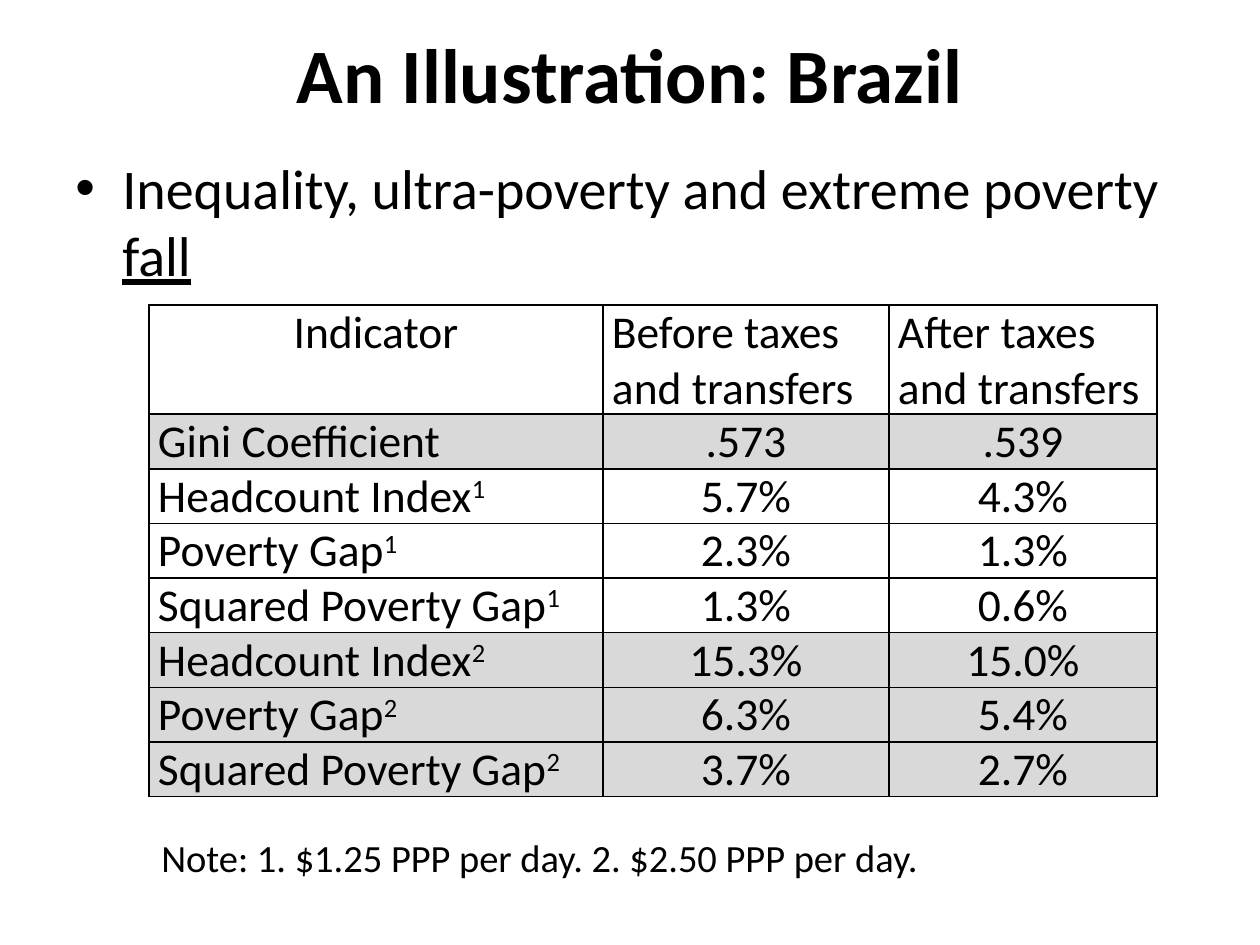
from lxml.etree import SubElement
from pptx import Presentation
from pptx.dml.color import RGBColor
from pptx.enum.text import MSO_ANCHOR as Anchor, PP_ALIGN as Align
from pptx.oxml.ns import qn
from pptx.util import Emu, Pt

BLACK = RGBColor(0x00, 0x00, 0x00)
GREY = RGBColor(0xD9, 0xD9, 0xD9)
PX = 914400 / 126


def px(*lengths):
    return [Emu(round(length * PX)) for length in lengths]


def style(paragraph, size, align=Align.LEFT, bold=False):
    paragraph.alignment = align
    for run in paragraph.runs:
        run.font.name = "Calibri"
        run.font.size = Pt(size)
        run.font.bold = bold
        run.font.color.rgb = BLACK


prs = Presentation()
prs.slide_width, prs.slide_height = px(1260, 945)
slide = prs.slides.add_slide(prs.slide_layouts[6])

title = slide.shapes.add_textbox(*px(63, -6, 1134, 157)).text_frame
title.word_wrap = True
title.vertical_anchor = Anchor.MIDDLE
title.text = "An Illustration: Brazil"
style(title.paragraphs[0], 44, Align.CENTER, bold=True)

finding = slide.shapes.add_textbox(*px(63, 147, 1134, 624)).text_frame
finding.word_wrap = True
finding.text = "Inequality, ultra-poverty and extreme poverty "
bullet = finding.paragraphs[0]
bullet.add_run().text = "fall"
style(bullet, 32)
bullet.runs[1].font.underline = True
bullet.space_before = Pt(6.4)
bullet_format = bullet._p.get_or_add_pPr()
indent, = px(47)
bullet_format.set("marL", str(indent))
bullet_format.set("indent", str(-indent))
SubElement(bullet_format, qn("a:buFont"), typeface="Arial")
SubElement(bullet_format, qn("a:buChar"), char="•")

indicators = [
    ("Indicator", "", "Before taxes and transfers", "After taxes and transfers"),
    ("Gini Coefficient", "", ".573", ".539"),
    ("Headcount Index", "1", "5.7%", "4.3%"),
    ("Poverty Gap", "1", "2.3%", "1.3%"),
    ("Squared Poverty Gap", "1", "1.3%", "0.6%"),
    ("Headcount Index", "2", "15.3%", "15.0%"),
    ("Poverty Gap", "2", "6.3%", "5.4%"),
    ("Squared Poverty Gap", "2", "3.7%", "2.7%"),
]
shaded_rows = {1, 5, 6, 7}

table = slide.shapes.add_table(len(indicators), 3, *px(149, 305, 1008, 491)).table
table.first_row = False
table.horz_banding = False
for column, width in zip(table.columns, px(454, 286, 268)):
    column.width = width
for row, height in zip(table.rows, px(99, *[49] * 7)):
    row.height = height

for r, (indicator, note_mark, before, after) in enumerate(indicators):
    for c, text in enumerate((indicator, before, after)):
        cell = table.cell(r, c)
        cell.margin_left, cell.margin_top, cell.margin_right, cell.margin_bottom = px(9, 0, 9, 0)
        cell.text_frame.text = text
        entry = cell.text_frame.paragraphs[0]
        if c == 0 and note_mark:
            mark = entry.add_run()
            mark.text = note_mark
            mark.font._element.set("baseline", "30000")
        centred = (r == 0) == (c == 0)
        style(entry, 26, Align.CENTER if centred else Align.LEFT)
        cell_format = cell._tc.get_or_add_tcPr()
        for side in ("a:lnL", "a:lnR", "a:lnT", "a:lnB"):
            border = SubElement(cell_format, qn(side), w=str(Pt(1)))
            SubElement(SubElement(border, qn("a:solidFill")), qn("a:srgbClr"), val=str(BLACK))
        if r in shaded_rows:
            cell.fill.solid()
            cell.fill.fore_color.rgb = GREY
        else:
            cell.fill.background()

note = slide.shapes.add_textbox(*px(149, 828, 964, 59)).text_frame
note.word_wrap = True
note.text = "Note: 1. $1.25 PPP per day. 2. $2.50 PPP per day."
style(note.paragraphs[0], 22)

prs.save("out.pptx")
